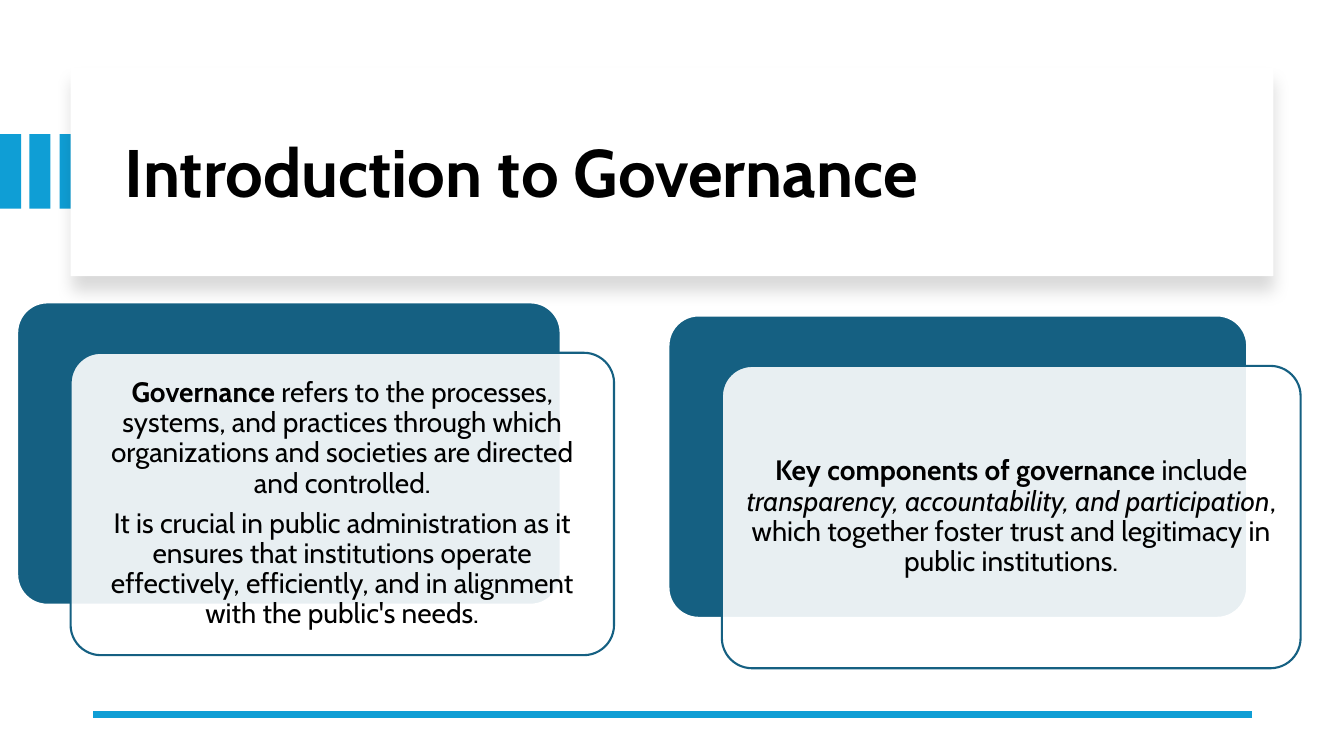
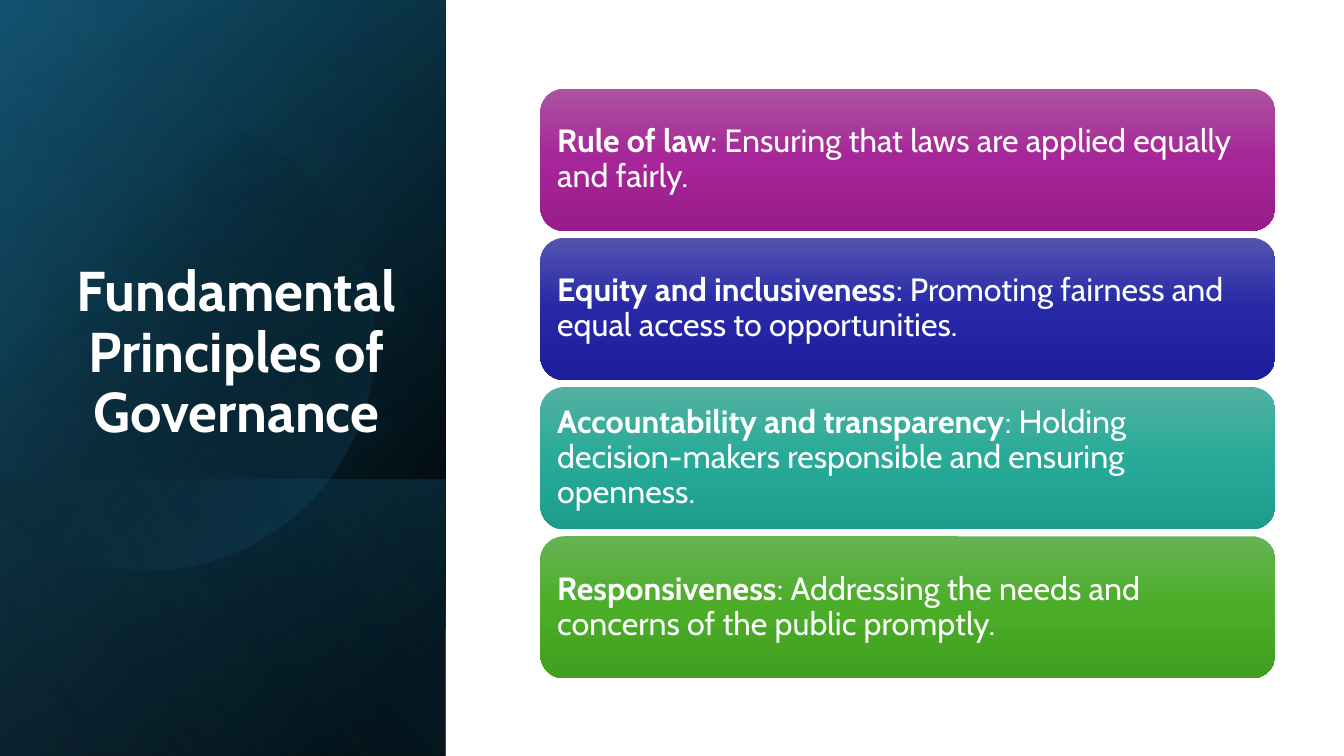
from math import acos, cos, pi, sin

from lxml.etree import SubElement
from pptx import Presentation
from pptx.dml.color import RGBColor
from pptx.enum.shapes import MSO_CONNECTOR as Connector
from pptx.enum.shapes import MSO_SHAPE as Preset
from pptx.enum.text import MSO_ANCHOR as Anchor
from pptx.enum.text import PP_ALIGN as Align
from pptx.oxml import parse_xml
from pptx.oxml.ns import nsdecls, qn
from pptx.util import Pt

EMU_PER_PX = 9144
PAGE_WIDTH, PAGE_HEIGHT = 1333, 750
PANEL_WIDTH = 442
FONT = "Cabin"
BLACK = RGBColor(0x00, 0x00, 0x00)
WHITE = RGBColor(0xFF, 0xFF, 0xFF)
SKY = RGBColor(0x0F, 0x9E, 0xD5)
PALE_SKY = RGBColor(0x46, 0xB1, 0xE1)
TEAL = RGBColor(0x15, 0x60, 0x82)
DEEP_TEAL = RGBColor(0x10, 0x48, 0x62)
PURPLES = RGBColor(0xAC, 0x53, 0xA0), RGBColor(0xA6, 0x25, 0x98), RGBColor(0x99, 0x1C, 0x8B)
BLUES = RGBColor(0x53, 0x54, 0xAE), RGBColor(0x26, 0x28, 0xA8), RGBColor(0x1D, 0x1E, 0x9B)
AQUAS = RGBColor(0x53, 0xB0, 0xA1), RGBColor(0x27, 0xAB, 0x98), RGBColor(0x1D, 0x9D, 0x8B)
GREENS = RGBColor(0x66, 0xB3, 0x54), RGBColor(0x4B, 0xAD, 0x28), RGBColor(0x40, 0x9F, 0x1E)

DEFINITION = [
    [("Governance", "bold"),
     (" refers to the processes, systems, and practices through which "
      "organizations and societies are directed and controlled.", "")],
    [("It is crucial in public administration as it ensures that institutions operate "
      "effectively, efficiently, and in alignment with the public's needs.", "")],
]
COMPONENTS = [
    [("Key components of governance ", "bold"),
     ("include ", ""),
     ("transparency, accountability, and participation", "italic"),
     (", which together foster trust and legitimacy in public institutions.", "")],
]
PRINCIPLES = [
    ("Rule of law", ": Ensuring that laws are applied equally and fairly.", PURPLES),
    ("Equity and inclusiveness",
     ": Promoting fairness and equal access to opportunities.", BLUES),
    ("Accountability and transparency",
     ": Holding decision-makers responsible and ensuring openness.", AQUAS),
    ("Responsiveness",
     ": Addressing the needs and concerns of the public promptly.", GREENS),
]


def px(length):
    return round(length * EMU_PER_PX)


def add_box(page, preset, frame, color=None, outline=None):
    box = page.shapes.add_shape(preset, *map(px, frame))
    box.shadow.inherit = False
    if color is not None:
        box.fill.solid()
        box.fill.fore_color.rgb = color
    if outline is None:
        box.line.fill.background()
    else:
        box.line.color.rgb = outline
        box.line.width = Pt(1.5)
    return box


def set_gradient(shape, stops, angle):
    shape.fill.gradient()
    marks = "".join(
        f'<a:gs pos="{place * 1000}"><a:srgbClr val="{color}">'
        f'<a:alpha val="{opacity * 1000}"/></a:srgbClr></a:gs>'
        for place, color, opacity in stops
    )
    gradient = parse_xml(
        f'<a:gradFill {nsdecls("a")} rotWithShape="1"><a:gsLst>{marks}</a:gsLst>'
        f'<a:lin ang="{angle * 60000}" scaled="0"/></a:gradFill>'
    )
    properties = shape.element.spPr
    properties.replace(properties.find(qn("a:gradFill")), gradient)


def set_opacity(shape, percent):
    color = shape.element.spPr.find(f'{qn("a:solidFill")}/{qn("a:srgbClr")}')
    SubElement(color, qn("a:alpha"), val=str(percent * 1000))


def add_soft_shadow(shape):
    effects = shape.element.spPr.find(qn("a:effectLst"))
    effects.append(parse_xml(
        f'<a:outerShdw {nsdecls("a")} blurRad="{Pt(11)}" dist="{Pt(10)}" dir="5400000" '
        'algn="t" rotWithShape="0"><a:srgbClr val="000000">'
        '<a:alpha val="15000"/></a:srgbClr></a:outerShdw>'
    ))


def write_text(shape, paragraphs, size, color, align, anchor=Anchor.MIDDLE, inset=None):
    frame = shape.text_frame
    frame.word_wrap = True
    frame.vertical_anchor = anchor
    if inset is not None:
        frame.margin_left = frame.margin_right = px(inset)
        frame.margin_top = frame.margin_bottom = px(inset)
    for index, spans in enumerate(paragraphs):
        para = frame.add_paragraph() if index else frame.paragraphs[0]
        para.alignment = align
        para.line_spacing = 0.9
        if index:
            para.space_before = Pt(round(size * 0.35))
        for words, style in spans:
            span = para.add_run()
            span.text = words
            span.font.name = FONT
            span.font.size = Pt(size)
            span.font.color.rgb = color
            span.font.bold = style == "bold"
            span.font.italic = style == "italic"


def add_title(page, frame, words, size, color, align, anchor):
    box = page.shapes.add_textbox(*map(px, frame))
    write_text(box, [[(words, "bold")]], size, color, align, anchor)


def add_rule(page, left, right, top):
    rule = page.shapes.add_connector(Connector.STRAIGHT, px(right), px(top), px(left), px(top))
    rule.line.color.rgb = SKY
    rule.line.width = Pt(4.5)
    SubElement(rule.element.spPr, qn("a:effectLst"))


def add_layered_card(page, left, top, width, paragraphs):
    height = 300
    back = add_box(page, Preset.ROUNDED_RECTANGLE, (left, top, width, height), TEAL, WHITE)
    front = add_box(page, Preset.ROUNDED_RECTANGLE,
                    (left + 53, top + 50, width, height), WHITE, TEAL)
    for card in (back, front):
        card.adjustments[0] = 0.1
    set_opacity(front, 90)
    write_text(front, paragraphs, 20, BLACK, Align.CENTER, inset=8)


def add_panel(page, top, height, stops, angle):
    shift = (PANEL_WIDTH - height) / 2
    panel = add_box(page, Preset.RECTANGLE, (shift, top - shift, height, PANEL_WIDTH))
    panel.rotation = 90
    panel.element.spPr.find(qn("a:xfrm")).set("flipH", "1")
    set_gradient(panel, stops, angle)


def add_disc(page, center_x, center_y, radius):
    reach = acos(-center_x / radius)
    steps = 90
    angles = [reach * (2 * step / steps - 1) for step in range(steps + 1)]
    points = [(px(center_x + radius * cos(angle)), px(center_y + radius * sin(angle)))
              for angle in angles]
    builder = page.shapes.build_freeform(*points[0])
    builder.add_line_segments(points[1:], close=True)
    disc = builder.convert_to_shape()
    disc.shadow.inherit = False
    disc.line.fill.background()
    set_gradient(disc, [(29, BLACK, 0), (100, TEAL, 43)], 45)


def add_principle(page, top, height, name, meaning, shades):
    card = add_box(page, Preset.ROUNDED_RECTANGLE, (536, top, 729, height))
    set_gradient(card, [(place, shade, 100) for place, shade in zip((0, 50, 100), shades)], 90)
    write_text(card, [[(name, "bold"), (meaning, "")]], 23, WHITE, Align.LEFT, inset=10)


def build_introduction(page):
    for index in range(3):
        add_box(page, Preset.RECTANGLE, (index * 59 // 2, 133, 21, 74), SKY)
    banner = add_box(page, Preset.RECTANGLE, (70, 67, 1193, 207), WHITE)
    add_soft_shadow(banner)
    add_title(page, (114, 89, 1113, 170), "Introduction to Governance",
              48, BLACK, Align.LEFT, Anchor.MIDDLE)
    add_rule(page, 92, 1242, 709)
    add_layered_card(page, 17, 300, 539, DEFINITION)
    add_layered_card(page, 663, 313, 574, COMPONENTS)


def build_principles(page):
    add_panel(page, 0, PAGE_HEIGHT, [(8, BLACK, 100), (100, DEEP_TEAL, 100)], 50)
    add_panel(page, 0, PAGE_HEIGHT, [(0, BLACK, 0), (99, TEAL, 46)], 30)
    add_panel(page, 476, 274, [(2, TEAL, 29), (100, BLACK, 30)], 130)
    add_disc(page, 144, 338, 228)
    add_panel(page, 0, PAGE_HEIGHT, [(0, BLACK, 0), (99, PALE_SKY, 11)], 120)
    add_title(page, (64, 184, 341, 262), "Fundamental Principles of Governance",
              40, WHITE, Align.CENTER, Anchor.BOTTOM)
    height, gap = 141, 7
    for index, principle in enumerate(PRINCIPLES):
        add_principle(page, 88 + index * (height + gap), height, *principle)


def main():
    deck = Presentation()
    deck.slide_width, deck.slide_height = px(PAGE_WIDTH), px(PAGE_HEIGHT)
    for build in (build_introduction, build_principles):
        build(deck.slides.add_slide(deck.slide_layouts[6]))
    deck.save("out.pptx")


if __name__ == "__main__":
    main()
